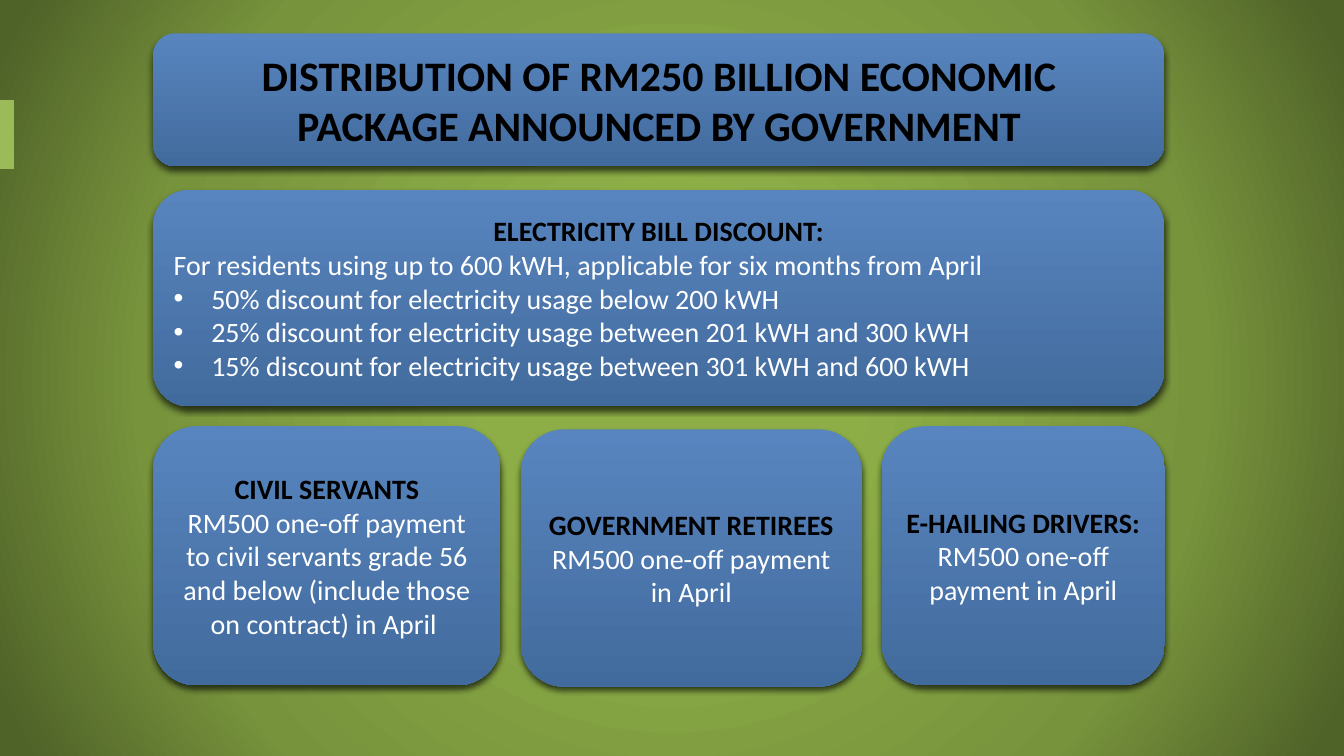
from lxml import etree
from pptx import Presentation
from pptx.dml.color import RGBColor
from pptx.enum.shapes import MSO_CONNECTOR as Connector, MSO_SHAPE as Shape
from pptx.enum.text import MSO_ANCHOR as Anchor, MSO_AUTO_SIZE as AutoSize, PP_ALIGN as Align
from pptx.oxml.ns import qn
from pptx.util import Cm, Pt

COLORS = {
    "black": "000000",
    "white": "FFFFFF",
    "accent": "9BBB59",
    "card_top": "5885BF",
    "card_bottom": "426B9D",
}
BACKGROUND_STOPS = [(0, "8DAE47"), (23, "8DAE47"), (69, "77933C"), (97, "4F6228")]
FONT = "Calibri"
TITLE = "DISTRIBUTION OF RM250 BILLION ECONOMIC PACKAGE ANNOUNCED BY GOVERNMENT"
LEFT, WIDTH = 3.86, 25.48

DISCOUNT_HEADING = "ELECTRICITY BILL DISCOUNT:"
DISCOUNT_INTRO = "For residents using up to 600 kWH, applicable for six months from April"
DISCOUNTS = [
    "50% discount for electricity usage below 200 kWH",
    "25% discount for electricity usage between 201 kWH and 300 kWH",
    "15% discount for electricity usage between 301 kWH and 600 kWH",
]
# Box in centimetres, heading, text
PAYMENTS = [
    ((LEFT, 10.74, 8.76, 6.53), "CIVIL SERVANTS",
     "RM500 one-off payment to civil servants grade 56 and below "
     "(include those on contract) in April "),
    ((13.13, 10.82, 8.59, 6.48), "GOVERNMENT RETIREES", "RM500 one-off payment in April"),
    ((22.22, 10.74, 7.14, 6.53), "E-HAILING DRIVERS:", "RM500 one-off payment in April"),
]


def add_xml(parent, tag, **attributes):
    return etree.SubElement(parent, qn(tag), attributes)


def rgb(name):
    return RGBColor.from_string(COLORS[name])


class SlideBuilder:
    def __init__(self, presentation):
        self.slide = presentation.slides.add_slide(presentation.slide_layouts[5])

    def paint_background(self, stops):
        """Fill the background with a gradient that spreads in circles from the centre."""
        self.slide.background.fill.gradient()
        gradient = self.slide.element.find(".//" + qn("a:gradFill"))
        for child in list(gradient):
            gradient.remove(child)
        stop_list = add_xml(gradient, "a:gsLst")
        for position, color in stops:
            stop = add_xml(stop_list, "a:gs", pos=str(position * 1000))
            add_xml(stop, "a:srgbClr", val=color)
        center = add_xml(gradient, "a:path", path="circle")
        add_xml(center, "a:fillToRect", l="50000", t="50000", r="50000", b="50000")

    def add_accent(self, x, top, bottom):
        line = self.slide.shapes.add_connector(
            Connector.STRAIGHT, Cm(x), Cm(bottom), Cm(x), Cm(top))
        line.line.color.rgb = rgb("accent")
        line.line.width = Pt(10)
        properties = line.element.spPr
        properties.find(qn("a:ln")).set("cap", "sq")
        add_xml(properties, "a:effectLst")

    def add_card(self, box):
        card = self.slide.shapes.add_shape(Shape.ROUNDED_RECTANGLE, *map(Cm, box))
        card.fill.gradient()
        card.fill.gradient_angle = 270
        for stop, color in zip(card.fill.gradient_stops, ("card_top", "card_bottom")):
            stop.color.rgb = rgb(color)
        card.line.fill.background()
        card.shadow.inherit = False
        shadow = add_xml(card.element.spPr.find(qn("a:effectLst")), "a:outerShdw",
                         blurRad=str(Pt(4.5)), dist=str(Pt(3)), dir="5400000",
                         rotWithShape="0")
        shadow_color = add_xml(shadow, "a:srgbClr", val=COLORS["black"])
        add_xml(shadow_color, "a:alpha", val="65000")
        card.text_frame.word_wrap = True
        card.text_frame.vertical_anchor = Anchor.MIDDLE
        return card

    def set_text(self, paragraph, text, size=20, heading=False, align=Align.CENTER, bullet=False):
        paragraph.text = text
        paragraph.alignment = align
        if bullet:
            properties = paragraph._p.get_or_add_pPr()
            indent = Cm(0.95)
            properties.set("marL", str(indent))
            properties.set("indent", str(-indent))
            add_xml(properties, "a:buFont", typeface="Arial")
            add_xml(properties, "a:buChar", char="•")
        for run in paragraph.runs:
            run.font.name = FONT
            run.font.size = Pt(size)
            run.font.bold = heading
            run.font.color.rgb = rgb("black" if heading else "white")

    def add_title(self, text, box):
        title = self.slide.shapes.title
        title.left, title.top, title.width, title.height = map(Cm, box)
        frame = title.text_frame
        frame.word_wrap = True
        frame.auto_size = AutoSize.NONE
        frame.vertical_anchor = Anchor.MIDDLE
        self.set_text(frame.paragraphs[0], text, size=30, heading=True)
        # The title has to lie in front of its card
        title.element.getparent().append(title.element)

    def add_text_card(self, box, heading):
        frame = self.add_card(box).text_frame
        self.set_text(frame.paragraphs[0], heading, heading=True)
        return frame


def main():
    presentation = Presentation()
    presentation.slide_width, presentation.slide_height = Cm(33.87), Cm(19.05)
    builder = SlideBuilder(presentation)
    builder.paint_background(BACKGROUND_STOPS)
    builder.add_accent(0.18, 2.69, 4.09)

    builder.add_card((LEFT, 0.84, WIDTH, 3.35))
    builder.add_title(TITLE, (5.26, 0.76, 22.71, 3.5))

    frame = builder.add_text_card((LEFT, 4.78, WIDTH, 5.46), DISCOUNT_HEADING)
    builder.set_text(frame.add_paragraph(), DISCOUNT_INTRO, align=Align.LEFT)
    for discount in DISCOUNTS:
        builder.set_text(frame.add_paragraph(), discount, align=Align.LEFT, bullet=True)

    for box, heading, text in PAYMENTS:
        frame = builder.add_text_card(box, heading)
        builder.set_text(frame.add_paragraph(), text)

    presentation.save("out.pptx")


if __name__ == "__main__":
    main()
